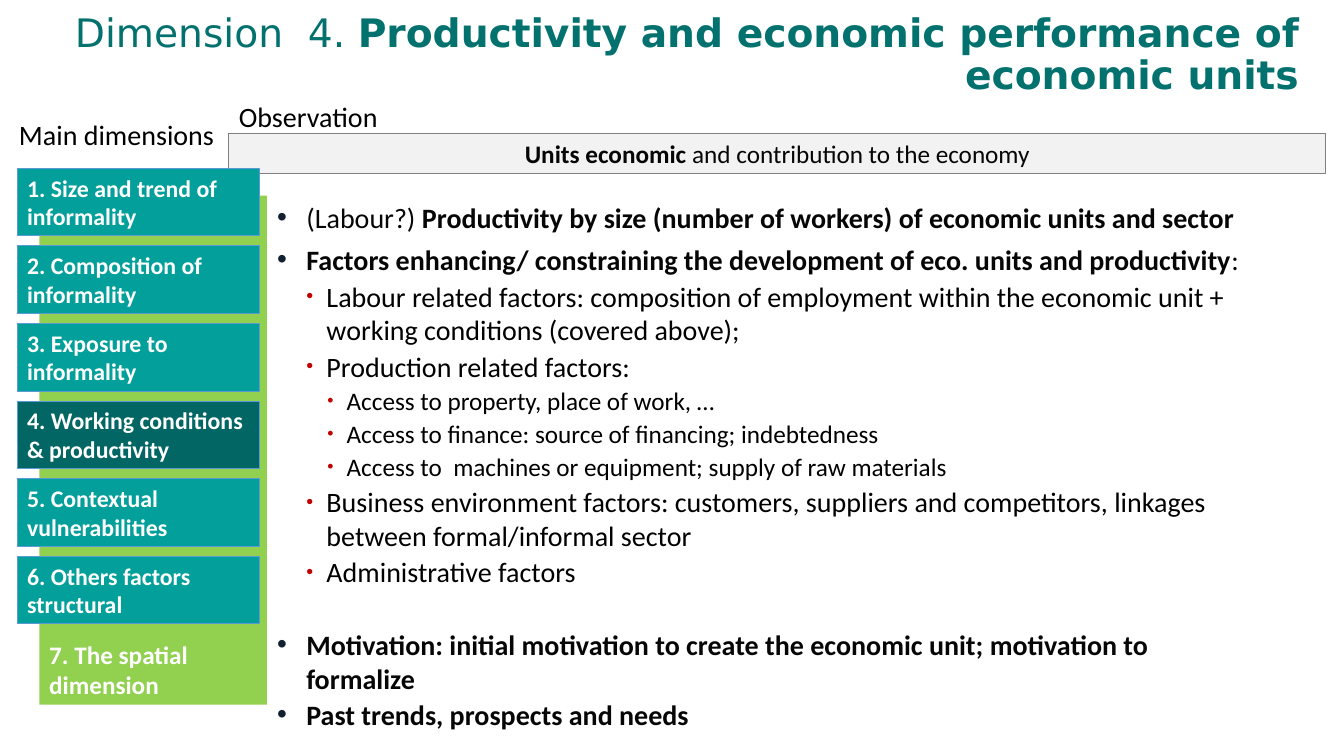
from dataclasses import dataclass

from lxml.etree import SubElement
from pptx import Presentation
from pptx.dml.color import RGBColor
from pptx.enum.shapes import MSO_SHAPE
from pptx.enum.text import MSO_ANCHOR, PP_ALIGN
from pptx.oxml.ns import qn
from pptx.shapes.autoshape import Shape
from pptx.slide import Slide
from pptx.text.text import _Paragraph
from pptx.util import Inches, Pt

COLORS = {
    "title": "03716E", "text": "060606", "black": "000000", "white": "FFFFFF",
    "bar": "F2F2F2", "bar_line": "808080", "spatial": "92D050",
    "button": "039F9B", "current": "026664", "button_line": "5B9BD5",
    "main_bullet": "122031", "sub_bullet": "C00000",
}


@dataclass(frozen=True)
class Area:
    left: float
    top: float
    width: float
    height: float


@dataclass(frozen=True)
class Span:
    text: str
    bold: bool = False


@dataclass(frozen=True)
class Style:
    size: float
    color: str
    font: str = "Calibri"
    align: PP_ALIGN = PP_ALIGN.LEFT


@dataclass(frozen=True)
class Level:
    style: Style
    margin: float
    indent: float
    bullet_color: str
    bullet_percent: int


@dataclass(frozen=True)
class Point:
    level: Level
    spans: tuple[Span, ...]
    before: float = 0
    after: float = 2


BUTTON = Style(17, "white")
LABEL = Style(20, "black")
MAIN = Level(Style(20, "text"), 0.29, -0.29, "main_bullet", 100)
FACTOR = Level(Style(20, "black"), 0.49, -0.2, "sub_bullet", 70)
DETAIL = Level(Style(18, "black"), 0.69, -0.19, "sub_bullet", 70)

DIMENSIONS = (
    "1. Size and trend of informality",
    "2. Composition of informality",
    "3. Exposure to informality",
    "4. Working conditions & productivity",
    "5. Contextual vulnerabilities",
    "6. Others factors structural",
)
CURRENT_DIMENSION = 3
BUTTON_TOP, BUTTON_PITCH = 1.67, 0.77

POINTS = (
    Point(MAIN, (
        Span("(Labour?)"),
        Span(" Productivity by size (number of workers) of economic units and sector", True),
    ), before=6, after=6),
    Point(MAIN, (
        Span("Factors enhancing/ constraining the development of eco. units and productivity", True),
        Span(":"),
    )),
    Point(FACTOR, (Span(
        "Labour related factors: composition of employment within the economic unit + "
        "working conditions (covered above);"),)),
    Point(FACTOR, (Span("Production related factors:"),)),
    Point(DETAIL, (Span("Access to property, place of work, …"),)),
    Point(DETAIL, (Span("Access to finance: source of financing; indebtedness"),)),
    Point(DETAIL, (Span("Access to  machines or equipment; supply of raw materials"),)),
    Point(FACTOR, (Span(
        "Business environment factors: customers, suppliers and competitors, "
        "linkages between formal/informal sector"),)),
    Point(FACTOR, (Span("Administrative factors"),)),
    Point(MAIN, (Span(
        "Motivation: initial motivation to create the economic unit; motivation to formalize",
        True),), before=26),
    Point(MAIN, (Span("Past trends, prospects and needs", True),)),
)


def rgb(name: str) -> RGBColor:
    return RGBColor.from_string(COLORS[name])


def write(paragraph: _Paragraph, spans: tuple[Span, ...], style: Style) -> None:
    paragraph.alignment = style.align
    paragraph.font.name = style.font
    paragraph.font.size = Pt(style.size)
    paragraph.font.color.rgb = rgb(style.color)
    for span in spans:
        run = paragraph.add_run()
        run.text = span.text
        run.font.bold = span.bold


def add_rectangle(page: Slide, area: Area, fill: str, line: str | None = None) -> Shape:
    box = page.shapes.add_shape(
        MSO_SHAPE.RECTANGLE, Inches(area.left), Inches(area.top),
        Inches(area.width), Inches(area.height))
    box.shadow.inherit = False
    box.fill.solid()
    box.fill.fore_color.rgb = rgb(fill)
    if line:
        box.line.color.rgb = rgb(line)
        box.line.width = Pt(0.75)
    else:
        box.line.fill.background()
    box.text_frame.word_wrap = True
    box.text_frame.vertical_anchor = MSO_ANCHOR.TOP
    return box


def add_text(page: Slide, area: Area, spans: tuple[Span, ...], style: Style) -> Shape:
    box = page.shapes.add_textbox(
        Inches(area.left), Inches(area.top), Inches(area.width), Inches(area.height))
    box.text_frame.word_wrap = True
    write(box.text_frame.paragraphs[0], spans, style)
    return box


def add_bullet(paragraph: _Paragraph, level: Level) -> None:
    properties = paragraph._p.get_or_add_pPr()
    properties.set("marL", str(Inches(level.margin)))
    properties.set("indent", str(Inches(level.indent)))
    color = SubElement(properties, qn("a:buClr"))
    SubElement(color, qn("a:srgbClr"), val=COLORS[level.bullet_color])
    SubElement(properties, qn("a:buSzPct"), val=str(level.bullet_percent * 1000))
    SubElement(properties, qn("a:buFont"), typeface="Arial")
    SubElement(properties, qn("a:buChar"), char="•")


def add_points(box: Shape, points: tuple[Point, ...]) -> None:
    frame = box.text_frame
    for index, point in enumerate(points):
        paragraph = frame.add_paragraph() if index else frame.paragraphs[0]
        add_bullet(paragraph, point.level)
        paragraph.space_before = Pt(point.before)
        paragraph.space_after = Pt(point.after)
        write(paragraph, point.spans, point.level.style)


def main() -> None:
    deck = Presentation()
    deck.slide_width, deck.slide_height = Inches(13.33), Inches(7.5)
    page = deck.slides.add_slide(deck.slide_layouts[6])

    spatial = add_rectangle(page, Area(0.39, 1.94, 2.63, 5.05), "spatial")
    spatial.text_frame.vertical_anchor = MSO_ANCHOR.BOTTOM
    spatial_style = Style(18, "white")
    write(spatial.text_frame.paragraphs[0], (Span("7. The spatial", True),), spatial_style)
    write(spatial.text_frame.add_paragraph(), (Span("dimension", True),), spatial_style)

    title = add_text(page, Area(0.31, 0.05, 12.67, 1.01), (
        Span("Dimension  4. "),
        Span("Productivity and economic performance of economic units", True),
    ), Style(28, "title", "DejaVu Sans", PP_ALIGN.RIGHT))
    title.text_frame.vertical_anchor = MSO_ANCHOR.MIDDLE
    title.text_frame.paragraphs[0].line_spacing = 0.9

    add_text(page, Area(2.27, 0.94, 10.6, 0.44), (Span("Observation"),), LABEL)
    add_text(page, Area(0.09, 1.12, 2.2, 0.77), (Span("Main dimensions"),), LABEL)

    bar = add_rectangle(page, Area(2.27, 1.32, 10.88, 0.4), "bar", "bar_line")
    write(bar.text_frame.paragraphs[0], (
        Span("Units economic ", True), Span("and contribution to the economy"),
    ), Style(18, "text", align=PP_ALIGN.CENTER))

    panel = add_rectangle(page, Area(2.65, 1.94, 9.96, 5.41), "white", "white")
    add_points(panel, POINTS)

    for index, dimension in enumerate(DIMENSIONS):
        area = Area(0.17, BUTTON_TOP + index * BUTTON_PITCH, 2.4, 0.67)
        fill = "current" if index == CURRENT_DIMENSION else "button"
        button = add_rectangle(page, area, fill, "button_line")
        write(button.text_frame.paragraphs[0], (Span(dimension, True),), BUTTON)

    deck.save("out.pptx")


if __name__ == "__main__":
    main()
